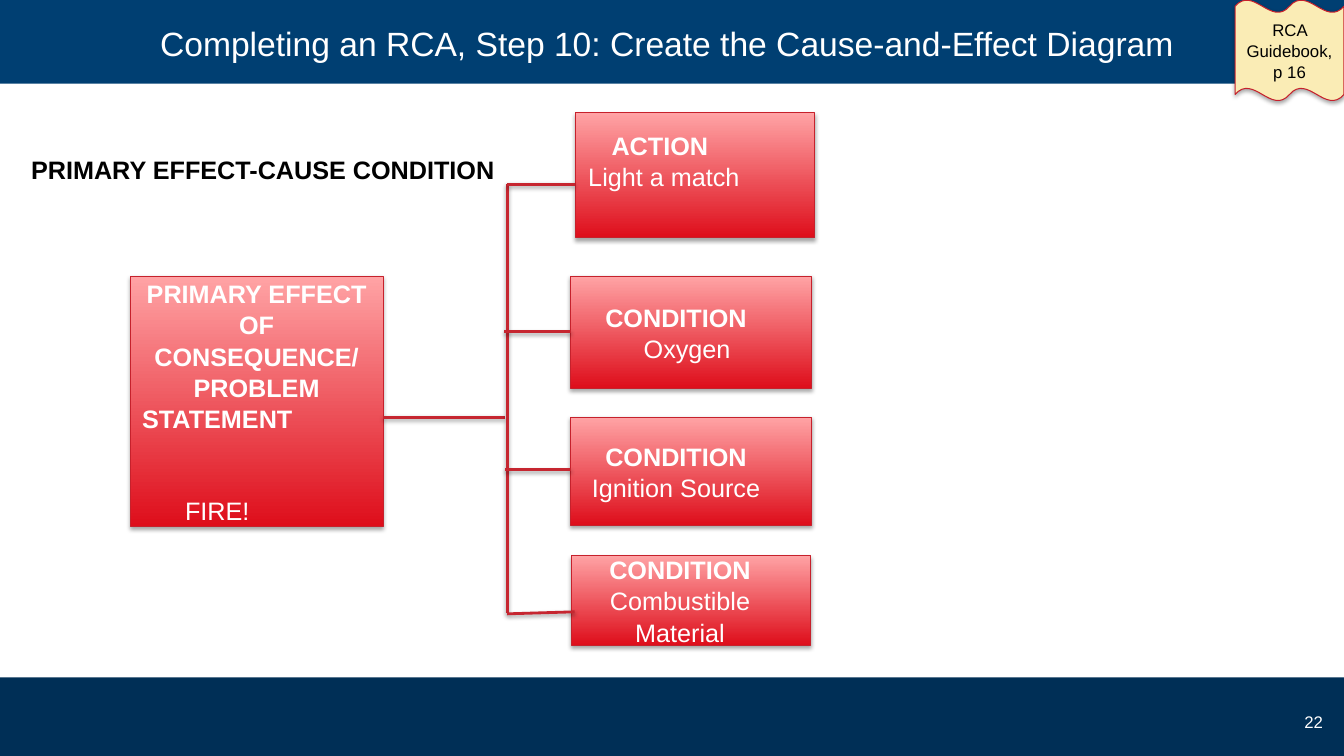
from lxml import etree
from pptx import Presentation
from pptx import util as u
from pptx.dml.color import RGBColor
from pptx.enum import shapes, text
from pptx.oxml import ns

COLS, ROWS = 13.33, 7.5
CELL = u.Inches(1)
FONT = "Arial"
WHITE, BLACK = "FFFFFF", "000000"
RED_DARK, RED_LIGHT, OUTLINE, BRANCH = "DE0E1B", "FFA3A5", "C6212C", "C62630"

TITLE = "Completing an RCA, Step 10: Create the Cause-and-Effect Diagram"
HEADING = "PRIMARY EFFECT-CAUSE CONDITION"
GUIDE = "RCA Guidebook, p 16"
PAGE = "22"

# Each line: wording, bold, shift from centre, space before
BOXES = [
    ((1.29, 2.74, 2.51, 2.48), 0.05, [
        ("PRIMARY EFFECT OF CONSEQUENCE/ PROBLEM", True, 0, 0),
        ("STATEMENT", True, -0.39, 0),
        ("FIRE!", False, 0, 43)]),
    ((5.71, 1.12, 2.37, 1.24), 0.35, [
        ("ACTION", True, -0.35, 0), ("Light a match", False, -0.31, 0)]),
    ((5.66, 2.74, 2.39, 1.11), 0.05, [
        ("CONDITION", True, -0.15, 0), ("Oxygen", False, -0.04, 0)]),
    ((5.66, 4.14, 2.39, 1.07), 0.05, [
        ("CONDITION", True, -0.15, 0), ("Ignition Source", False, 0, 0)]),
    ((5.67, 5.51, 2.37, 0.89), 0.05, [
        ("CONDITION", True, -0.11, 0), ("Combustible Material", False, 0, 0)]),
]
TRUNK = 5.03
BRANCHES = [
    (3.8, 4.14, 5.01, 4.14),
    (TRUNK, 1.83, TRUNK, 6.08),
    (TRUNK, 1.83, 5.7, 1.83),
    (5, 3.29, 5.66, 3.29),
    (5.01, 4.66, 5.66, 4.66),
    (TRUNK, 6.09, 5.7, 6.07),
]

prs = Presentation()
prs.slide_width, prs.slide_height = int(COLS * CELL), int(ROWS * CELL)
s = prs.slides.add_slide(prs.slide_layouts[6])


def grid(*cells):
    return [int(c * CELL) for c in cells]


def color(value):
    return RGBColor.from_string(value)


def add_shadow(sp, alpha, dist):
    sp_pr = sp._element.spPr
    for old in sp_pr.findall(ns.qn("a:effectLst")):
        sp_pr.remove(old)
    effects = etree.SubElement(sp_pr, ns.qn("a:effectLst"))
    outer = etree.SubElement(effects, ns.qn("a:outerShdw"), blurRad=str(u.Pt(3.1)),
                             dist=str(u.Pt(dist)), dir="5400000", rotWithShape="0")
    tone = etree.SubElement(outer, ns.qn("a:srgbClr"), val=BLACK)
    etree.SubElement(tone, ns.qn("a:alpha"), val=str(alpha * 1000))


def write(sp, lines, size, ink, align=text.PP_ALIGN.CENTER,
          anchor=text.MSO_ANCHOR.MIDDLE, wrap=True):
    tf = sp.text_frame
    tf.word_wrap, tf.vertical_anchor = wrap, anchor
    for i, (words, bold, shift, before) in enumerate(lines):
        p = tf.paragraphs[0] if i == 0 else tf.add_paragraph()
        p.text, p.alignment, p.line_spacing = words, align, 1.04
        if shift:
            p._p.get_or_add_pPr().set("marR", str(int(-2 * shift * CELL)))
        if before:
            p.space_before = u.Pt(before)
        p.font.name, p.font.size, p.font.bold = FONT, u.Pt(size), bold
        p.font.color.rgb = color(ink)
    return tf


def add_box(kind, place, fill, outlined=True):
    sp = s.shapes.add_shape(kind, *grid(*place))
    sp.shadow.inherit = False
    if fill:
        sp.fill.solid()
        sp.fill.fore_color.rgb = color(fill)
    else:
        sp.fill.gradient()
        sp.fill.gradient_angle = 90
        for stop, tone, at in zip(sp.fill.gradient_stops, (RED_DARK, RED_LIGHT), (0, 1)):
            stop.color.rgb, stop.position = color(tone), at
    if outlined:
        sp.line.color.rgb, sp.line.width = color(OUTLINE), u.Pt(0.75)
        add_shadow(sp, 35, 1.8)
    else:
        sp.line.fill.background()
    return sp


RECT = shapes.MSO_SHAPE.RECTANGLE
add_box(RECT, (0, 6.72, COLS, ROWS - 6.72), "002F56", False)
banner = add_box(RECT, (0, 0, COLS, 0.83), "003F72", False)
write(banner, [(TITLE, False, -0.05, 0)], 24, WHITE)

page = s.shapes.add_textbox(*grid(10.89, 7, 2.33, 0.4))
write(page, [(PAGE, False, 0, 0)], 12, WHITE, text.PP_ALIGN.RIGHT, text.MSO_ANCHOR.TOP)

for place, bottom, lines in BOXES:
    tf = write(add_box(RECT, place, None), lines, 18, WHITE)
    tf.margin_bottom = u.Inches(bottom)

for ends in BRANCHES:
    branch = s.shapes.add_connector(shapes.MSO_CONNECTOR.STRAIGHT, *grid(*ends))
    branch.line.color.rgb, branch.line.width = color(BRANCH), u.Pt(2)
    add_shadow(branch, 38, 1.6)

heading = s.shapes.add_textbox(*grid(0.21, 1.47, 4.82, 0.4))
write(heading, [(HEADING, True, 0, 0)], 18, BLACK, text.PP_ALIGN.LEFT,
      text.MSO_ANCHOR.TOP, False)

guide = add_box(shapes.MSO_SHAPE.DOUBLE_WAVE, (12.25, 0, 1.08, 1), "FAECB5")
tf = write(guide, [(GUIDE, False, 0, 0)], 12, BLACK)
tf.margin_left = tf.margin_right = u.Inches(0.08)

prs.save("out.pptx")
